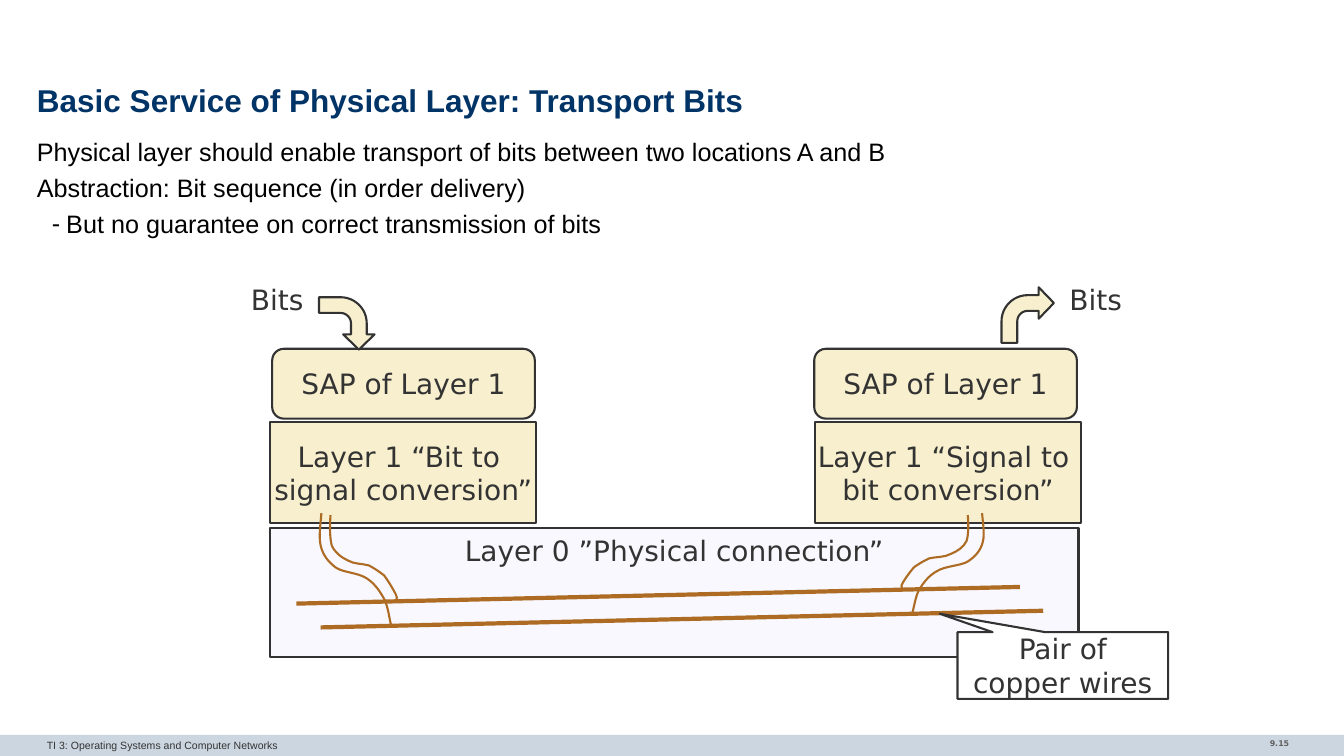
from lxml import etree
from pptx import Presentation
from pptx import util as u
from pptx.dml.color import RGBColor
from pptx.enum import shapes, text
from pptx.oxml import ns

NAVY = RGBColor(0x00, 0x33, 0x66)
BLACK = RGBColor(0x00, 0x00, 0x00)
WHITE = RGBColor(0xFF, 0xFF, 0xFF)
INK = RGBColor(0x33, 0x33, 0x33)
GREY = RGBColor(0x5F, 0x5F, 0x5F)
BAR = RGBColor(0xCC, 0xD6, 0xE0)
CREAM = RGBColor(0xF7, 0xEF, 0xCD)
PALE = RGBColor(0xF8, 0xF8, 0xFE)
COPPER = RGBColor(0xAD, 0x6B, 0x23)
SANS, DIAGRAM = "Arial", "DejaVu Sans"
KIND = shapes.MSO_SHAPE
LEFT, CENTER, RIGHT = text.PP_ALIGN.LEFT, text.PP_ALIGN.CENTER, text.PP_ALIGN.RIGHT
TOP, MIDDLE = text.MSO_ANCHOR.TOP, text.MSO_ANCHOR.MIDDLE

prs = Presentation()
prs.slide_width, prs.slide_height = u.Cm(33.87), u.Cm(19.05)
slide = prs.slides.add_slide(prs.slide_layouts[6])


def write(shape, words, size=20, font=DIAGRAM, color=INK, bold=False,
          align=CENTER, anchor=MIDDLE, wrap=False, margin=None):
    frame = shape.text_frame
    frame.word_wrap, frame.vertical_anchor = wrap, anchor
    if margin is not None:
        frame.margin_left = frame.margin_right = u.Cm(margin)
        frame.margin_top = frame.margin_bottom = u.Cm(margin)
    frame.text = words
    for paragraph in frame.paragraphs:
        paragraph.alignment = align
        paragraph.font.size, paragraph.font.name = u.Pt(size), font
        paragraph.font.bold, paragraph.font.color.rgb = bold, color
    return frame


def block(kind, box, fill, outlined=True):
    shape = slide.shapes.add_shape(kind, *map(u.Cm, box))
    shape.shadow.inherit = False
    shape.fill.solid()
    shape.fill.fore_color.rgb = fill
    if outlined:
        shape.line.color.rgb, shape.line.width = INK, u.Pt(1.5)
    else:
        shape.line.fill.background()
    return shape


# Footer bar and page number
block(KIND.RECTANGLE, (0, 18.52, 33.87, 0.53), BAR, outlined=False)
page = slide.shapes.add_textbox(u.Cm(28.19), u.Cm(18.49), u.Cm(4.55), u.Cm(0.58))
write(page, "9.15", 5.6, color=GREY, bold=True, align=RIGHT, anchor=TOP, wrap=True)

# Title
title = slide.shapes.add_textbox(u.Cm(0.93), u.Cm(2), u.Cm(32), u.Cm(1.19))
heading = write(title, "Basic Service of Physical Layer: Transport Bits", 22.5, SANS, NAVY,
                bold=True, align=LEFT, wrap=True, margin=0)
heading.paragraphs[0].line_spacing = 0.85

# Statements, the last one with a dash bullet
statements = [
    "Physical layer should enable transport of bits between two locations A and B",
    "Abstraction: Bit sequence (in order delivery)",
    "But no guarantee on correct transmission of bits",
]
body = slide.shapes.add_textbox(u.Cm(0.93), u.Cm(3.41), u.Cm(32), u.Cm(14.58))
frame = write(body, "\n".join(statements), 18, SANS, BLACK,
              align=LEFT, anchor=TOP, wrap=True, margin=0)
for number, statement in enumerate(frame.paragraphs):
    statement.line_spacing = 1.02
    if number:
        statement.space_before = u.Pt(3.8)
detail = frame.paragraphs[-1]
detail.level = 1
props = detail._p.get_or_add_pPr()
props.set("marL", str(u.Cm(0.74)))
props.set("indent", str(u.Cm(-0.36)))
run_defaults = props.find(ns.qn("a:defRPr"))
for tag, attributes in [("a:buSzPct", {"val": "100000"}), ("a:buFont", {"typeface": SANS}),
                        ("a:buChar", {"char": "-"})]:
    run_defaults.addprevious(etree.Element(ns.qn(tag), attributes))

# Layer 0 with its two straight wires
layer0 = block(KIND.RECTANGLE, (6.81, 13.31, 20.37, 3.25), PALE)
write(layer0, "Layer 0 ”Physical connection”", anchor=TOP)
for ends in [(7.47, 15.21, 25.7, 14.79), (8.08, 15.81, 26.29, 15.39)]:
    wire = slide.shapes.add_connector(shapes.MSO_CONNECTOR.STRAIGHT, *map(u.Cm, ends))
    wire.line.color.rgb, wire.line.width = COPPER, u.Pt(3)
    etree.SubElement(wire._element.spPr, ns.qn("a:effectLst"))

callout = block(KIND.RECTANGULAR_CALLOUT, (24.13, 15.93, 5.31, 1.68), WHITE)
callout.adjustments[0], callout.adjustments[1] = -0.584, -0.776
write(callout, "Pair of copper wires", wrap=True)

# The two stations: layer 1, service access point, bits in or out
stations = [
    ("Layer 1 “Bit to \vsignal conversion”", 6.81, 6.86, 6.07, (8.08, 7.45), 90),
    ("Layer 1 “Signal to \vbit conversion”", 20.54, 20.52, 26.7, (25.24, 7.24), 0),
]
for label, layer_left, sap_left, bits_left, arrow_corner, turn in stations:
    layer1 = block(KIND.RECTANGLE, (layer_left, 10.64, 6.71, 2.54), CREAM)
    write(layer1, label)
    sap = block(KIND.ROUNDED_RECTANGLE, (sap_left, 8.79, 6.62, 1.76), CREAM)
    write(sap, "SAP of Layer 1")
    bits = slide.shapes.add_textbox(u.Cm(bits_left), u.Cm(7), u.Cm(1.83), u.Cm(1.09))
    write(bits, "Bits", anchor=TOP)
    arrow = block(KIND.BENT_ARROW, (*arrow_corner, 1.32, 1.4), CREAM)
    for index, share in enumerate((0.3, 0.3, 0.29, 0.5)):
        arrow.adjustments[index] = share
    arrow.rotation = turn

# Curved wires in 0.01 cm: Bezier points of the left pair; the right pair is mirrored and flatter
outer = [(810, 1293), (808, 1321), (803, 1351), (808, 1374),
         (813, 1397), (826, 1415), (846, 1430),
         (864, 1443), (904, 1443), (925, 1458),
         (945, 1471), (958, 1491), (968, 1509),
         (978, 1529), (980, 1552), (986, 1577)]
inner = [(833, 1298), (831, 1326), (831, 1354), (836, 1374),
         (843, 1392), (861, 1405), (876, 1412),
         (892, 1422), (914, 1420), (930, 1425),
         (945, 1433), (955, 1440), (968, 1450),
         (978, 1463), (993, 1488), (998, 1499),
         (1003, 1509), (998, 1511), (996, 1516)]
curves = [outer, inner]
for curve, mirror_sum, flatten in [(outer, 3285, 0.89), (inner, 3272, 0.86)]:
    top = curve[0][1]
    curves.append([(mirror_sum - x, round(top + (y - top) * flatten)) for x, y in curve])
for curve in curves:
    builder = slide.shapes.build_freeform(*curve[0], scale=u.Cm(0.01))
    builder.add_line_segments(curve[1:], close=False)
    strand = builder.convert_to_shape()
    strand.shadow.inherit = False
    strand.fill.background()
    strand.line.color.rgb, strand.line.width = COPPER, u.Pt(1.5)
    # Join every three points into one Bezier segment
    segments = list(strand._element.iter(ns.qn("a:lnTo")))
    for start in range(0, len(segments), 3):
        bezier = etree.Element(ns.qn("a:cubicBezTo"))
        segments[start].addprevious(bezier)
        for segment in segments[start:start + 3]:
            bezier.append(segment[0])
            segment.getparent().remove(segment)

# Footer text
course = slide.shapes.add_textbox(u.Cm(0.93), u.Cm(18.49), u.Cm(22.15), u.Cm(0.56))
write(course, "TI 3: Operating Systems and Computer Networks", 7.5, SANS,
      align=LEFT, anchor=TOP, wrap=True)

prs.save("out.pptx")
